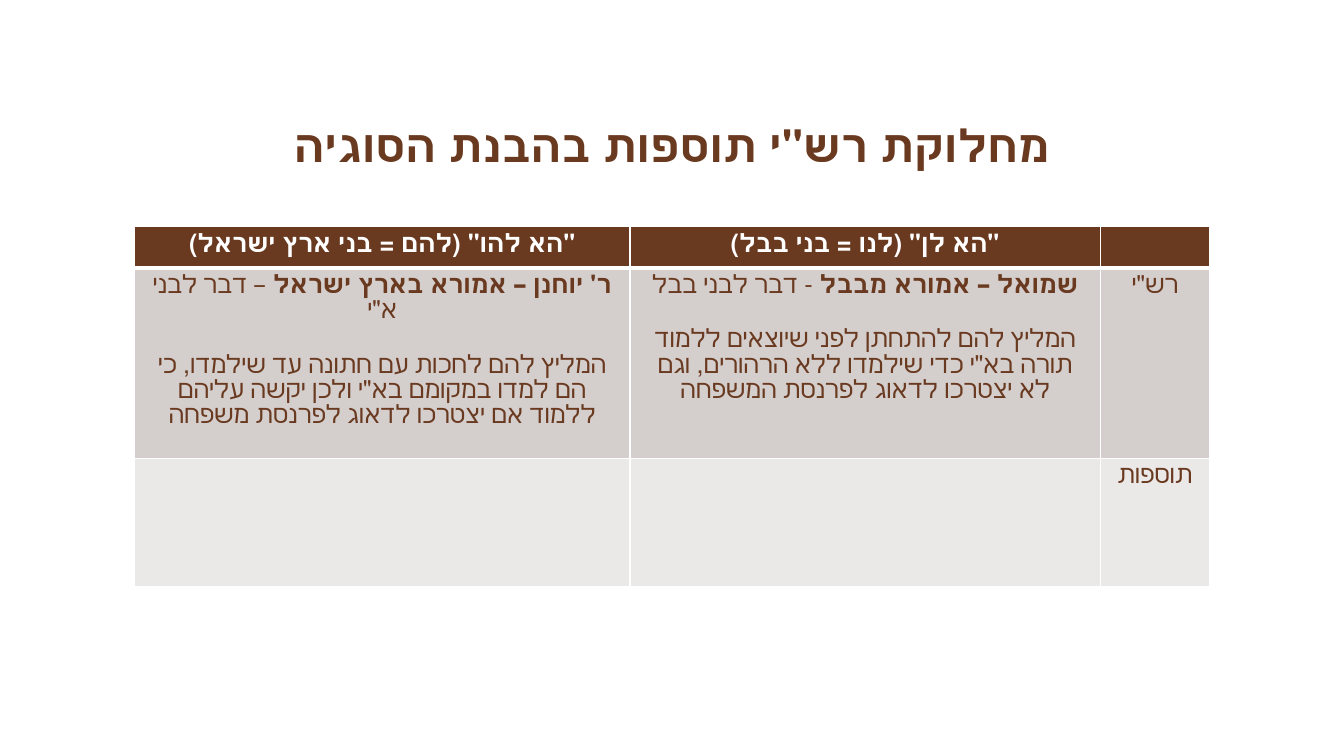
import pptx
import pptx.dml.color
import pptx.enum.text
import pptx.oxml
import pptx.oxml.ns
import pptx.util
from dataclasses import dataclass
from typing import Any

Pt = pptx.util.Pt
RGB = pptx.dml.color.RGBColor


@dataclass(frozen=True)
class Theme:
    font: str = "Cambria"
    brown: str = "6A3A20"
    white: str = "FFFFFF"
    rashi_fill: str = "D4CECD"
    tosafot_fill: str = "EBE8E8"
    title_size: float = 32
    cell_size: float = 18
    paragraph_gap: float = 21


@dataclass(frozen=True)
class Run:
    text: str
    bold: bool = False


@dataclass(frozen=True)
class Row:
    height: float
    fill: str
    color: str
    bottom_line: float
    cells: list[list[list[Run]]]


THEME = Theme()
LEFT, WIDTH = 96, 768
COLUMN_WIDTHS = [354, 336, 78]
TITLE = 'מחלוקת רש"י תוספות בהבנת הסוגיה'
ROWS = [
    Row(29.5, THEME.brown, THEME.white, 3, [
        [[Run('"הא להו" (להם = בני ארץ ישראל)', True)]],
        [[Run('"הא לן" (לנו = בני בבל)', True)]],
        [],
    ]),
    Row(120, THEME.rashi_fill, THEME.brown, 1, [
        [
            [Run("ר' יוחנן – אמורא בארץ ישראל ", True), Run('– דבר לבני א"י')],
            [Run('המליץ להם לחכות עם חתונה עד שילמדו, כי הם למדו במקומם בא"י '
                 'ולכן יקשה עליהם ללמוד אם יצטרכו לדאוג לפרנסת משפחה')],
        ],
        [
            [Run("שמואל – אמורא מבבל ", True), Run("- דבר לבני בבל")],
            [Run('המליץ להם להתחתן לפני שיוצאים ללמוד תורה בא"י כדי שילמדו '
                 'ללא הרהורים, וגם לא יצטרכו לדאוג לפרנסת המשפחה')],
        ],
        [[Run('רש"י')]],
    ]),
    Row(91, THEME.tosafot_fill, THEME.brown, 1, [[], [], [[Run("תוספות")]]]),
]


def write_paragraph(para: Any, runs: list[Run], size: float, color: str) -> None:
    """Fill a centred right-to-left paragraph."""
    para.alignment = pptx.enum.text.PP_ALIGN.CENTER
    para._p.get_or_add_pPr().set("rtl", "1")
    for run in runs:
        span = para.add_run()
        span.text = run.text
        formats = {"name": THEME.font, "size": Pt(size), "bold": run.bold}
        for name, value in formats.items():
            setattr(span.font, name, value)
        span.font.color.rgb = RGB.from_string(color)
        span._r.get_or_add_rPr().set("lang", "he-IL")


def set_borders(cell: Any, top: float, bottom: float) -> None:
    """Draw white cell borders, placed before the fill as the schema asks."""
    widths = {"lnL": 1, "lnR": 1, "lnT": top, "lnB": bottom}
    properties = cell._tc.get_or_add_tcPr()
    for index, (tag, width) in enumerate(widths.items()):
        line = pptx.oxml.parse_xml(
            f'<a:{tag} {pptx.oxml.ns.nsdecls("a")} w="{Pt(width)}"><a:solidFill>'
            f'<a:srgbClr val="{THEME.white}"/></a:solidFill></a:{tag}>')
        properties.insert(index, line)


def add_title(page: Any) -> None:
    box = page.shapes.add_textbox(Pt(LEFT), Pt(34), Pt(WIDTH), Pt(92))
    frame = box.text_frame
    frame.word_wrap = True
    frame.vertical_anchor = pptx.enum.text.MSO_ANCHOR.BOTTOM
    write_paragraph(frame.paragraphs[0], [Run(TITLE, True)],
                    THEME.title_size, THEME.brown)


def fill_cell(cell: Any, row: Row, paragraphs: list[list[Run]], top: float) -> None:
    cell.fill.solid()
    cell.fill.fore_color.rgb = RGB.from_string(row.fill)
    set_borders(cell, top, row.bottom_line)
    frame = cell.text_frame
    for index, runs in enumerate(paragraphs):
        para = frame.add_paragraph() if index else frame.paragraphs[0]
        if index:
            para.space_before = Pt(THEME.paragraph_gap)
        write_paragraph(para, runs, THEME.cell_size, row.color)


def add_opinions_table(page: Any) -> None:
    height = sum(row.height for row in ROWS)
    table = page.shapes.add_table(len(ROWS), len(COLUMN_WIDTHS), Pt(LEFT), Pt(162),
                                  Pt(WIDTH), Pt(height)).table
    for column, width in zip(table.columns, COLUMN_WIDTHS):
        column.width = Pt(width)
    top = 1
    for row_index, row in enumerate(ROWS):
        table.rows[row_index].height = Pt(row.height)
        for column_index, paragraphs in enumerate(row.cells):
            fill_cell(table.cell(row_index, column_index), row, paragraphs, top)
        top = row.bottom_line


def main() -> None:
    deck = pptx.Presentation()
    deck.slide_width, deck.slide_height = Pt(960), Pt(540)
    page = deck.slides.add_slide(deck.slide_layouts[6])
    add_title(page)
    add_opinions_table(page)
    deck.save("out.pptx")


if __name__ == "__main__":
    main()
